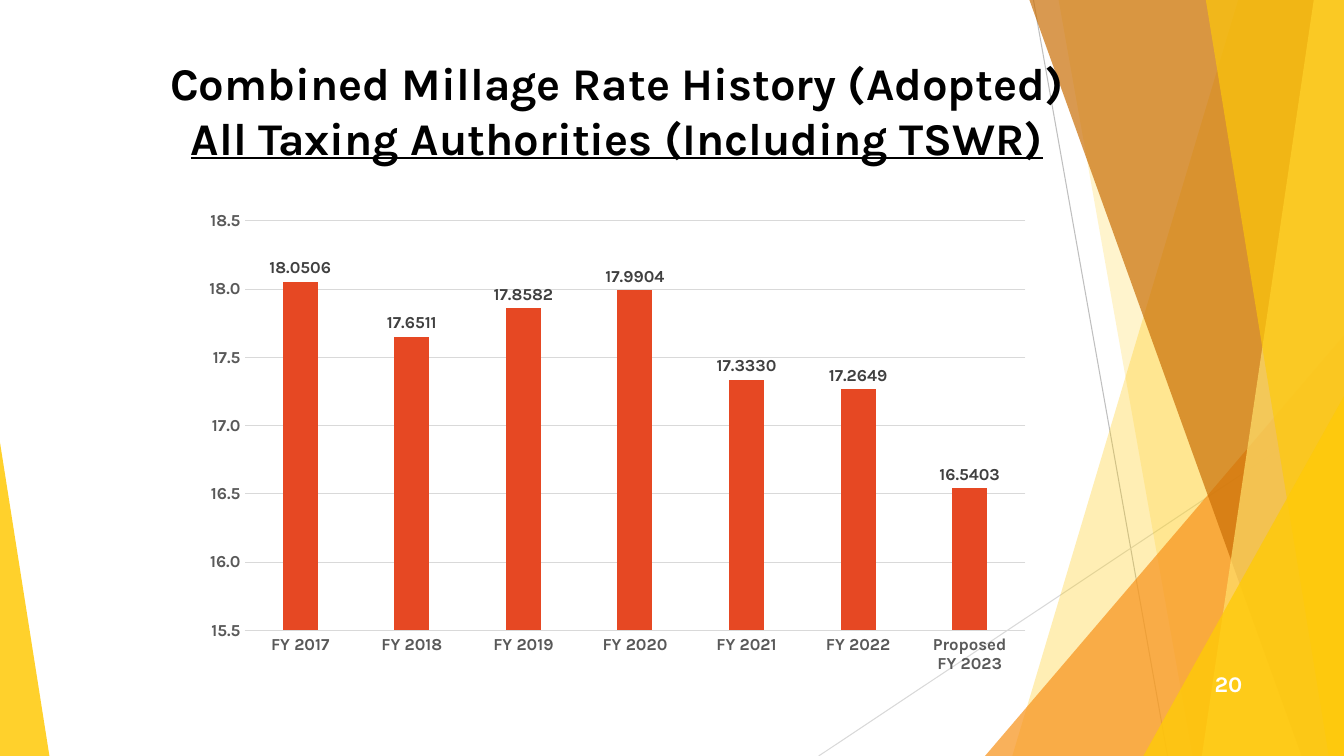
import pptx
import pptx.util
import pptx.dml.color
import pptx.chart.data
import pptx.enum.chart
import pptx.enum.shapes
import pptx.enum.text
import pptx.oxml
import pptx.oxml.ns

Inches = pptx.util.Inches
Pt = pptx.util.Pt
RGBColor = pptx.dml.color.RGBColor
qn = pptx.oxml.ns.qn

GOLD = RGBColor(0xFF, 0xCA, 0x08)
PALE_GOLD = RGBColor(0xFF, 0xDF, 0x6B)
ORANGE = RGBColor(0xF8, 0x93, 0x1D)
BROWN = RGBColor(0xCA, 0x6F, 0x06)
RED = RGBColor(0xE6, 0x48, 0x23)
BLACK = RGBColor(0, 0, 0)
WHITE = RGBColor(0xFF, 0xFF, 0xFF)
LABEL_GRAY = RGBColor(0x40, 0x40, 0x40)
AXIS_GRAY = RGBColor(0x59, 0x59, 0x59)
LINE_GRAY = RGBColor(0xBF, 0xBF, 0xBF)
GRID_GRAY = RGBColor(0xD9, 0xD9, 0xD9)
WIDTH, HEIGHT = 13.33, 7.5


def set_font(font, size, color, **extra):
    font.color.rgb = color
    values = {"name": "Karla", "size": Pt(size), "bold": True, **extra}
    for name, value in values.items():
        setattr(font, name, value)


def paint(shape, color, opacity):
    shape.shadow.inherit = False
    shape.line.fill.background()
    shape.fill.solid()
    shape.fill.fore_color.rgb = color
    color_node = shape.fill._xPr.find(qn("a:solidFill"))[0]
    alpha = color_node.makeelement(qn("a:alpha"), {"val": str(opacity * 1000)})
    color_node.append(alpha)


deck = pptx.Presentation()
deck.slide_width = Inches(WIDTH)
deck.slide_height = Inches(HEIGHT)
page = deck.slides.add_slide(deck.slide_layouts[6])

for start_x, start_y, end_x, end_y, color in [
    (10.25, 0, 11.58, HEIGHT, LINE_GRAY),
    (WIDTH, 4.03, 8.12, HEIGHT, GRID_GRAY),
]:
    line = page.shapes.add_connector(
        pptx.enum.shapes.MSO_CONNECTOR.STRAIGHT,
        Inches(start_x), Inches(start_y), Inches(end_x), Inches(end_y))
    line.line.color.rgb = color
    line.line.width = Pt(0.75)
    properties = line._element.spPr
    properties.append(properties.makeelement(qn("a:effectLst"), {}))

facets = [
    ("band", 12.28, 10.04, GOLD, 30),
    ("band", 10.5, 11.83, GOLD, 20),
    ("triangle", 9.77, 3.33, 3.56, 1, ORANGE, 72),
    ("band", 10.21, 12.91, BROWN, 70),
    ("band", 13.03, 11.92, PALE_GOLD, 70),
    ("band", 11.96, 13.18, GOLD, 65),
    ("triangle", 11.34, 3.93, 1.99, 1, GOLD, 80),
    ("triangle", 0, 4.39, 0.49, 0, GOLD, 85),
]
for kind, *geometry, color, opacity in facets:
    if kind == "band":
        top_x, bottom_x = geometry
        builder = page.shapes.build_freeform(Inches(top_x), 0)
        builder.add_line_segments([
            (Inches(WIDTH), 0),
            (Inches(WIDTH), Inches(HEIGHT)),
            (Inches(bottom_x), Inches(HEIGHT)),
        ])
        facet = builder.convert_to_shape()
    else:
        left, top, width, apex = geometry
        facet = page.shapes.add_shape(
            pptx.enum.shapes.MSO_SHAPE.ISOSCELES_TRIANGLE,
            Inches(left), Inches(top), Inches(width), Inches(HEIGHT - top))
        facet.adjustments[0] = apex
    paint(facet, color, opacity)

title_box = page.shapes.add_textbox(
    Inches(1.58), Inches(0.5), Inches(9.08), Inches(1.08))
title_box.text_frame.word_wrap = True
para = title_box.text_frame.paragraphs[0]
para.alignment = pptx.enum.text.PP_ALIGN.CENTER
span = para.add_run()
span.text = "Combined Millage Rate History (Adopted)"
set_font(span.font, 32.4, BLACK)
para.add_line_break()
span = para.add_run()
span.text = "All Taxing Authorities (Including TSWR)"
set_font(span.font, 32.4, BLACK, underline=True)

number_box = page.shapes.add_textbox(
    Inches(11.67), Inches(6.58), Inches(0.75), Inches(0.4))
number_box.text_frame.word_wrap = True
number_box.text_frame.vertical_anchor = pptx.enum.text.MSO_ANCHOR.MIDDLE
para = number_box.text_frame.paragraphs[0]
para.alignment = pptx.enum.text.PP_ALIGN.RIGHT
span = para.add_run()
span.text = "20"
set_font(span.font, 16, WHITE)

rates = {
    "FY 2017": 18.0506,
    "FY 2018": 17.6511,
    "FY 2019": 17.8582,
    "FY 2020": 17.9904,
    "FY 2021": 17.3330,
    "FY 2022": 17.2649,
    "Proposed\nFY 2023": 16.5403,
}
data = pptx.chart.data.CategoryChartData(number_format="0.0000")
data.categories = list(rates)
data.add_series("Series 1", list(rates.values()))
chart = page.shapes.add_chart(
    pptx.enum.chart.XL_CHART_TYPE.COLUMN_CLUSTERED,
    Inches(1.92), Inches(2), Inches(8.42), Inches(4.78), data).chart
chart.has_title = False
chart.has_legend = False
set_font(chart.font, 10, BLACK, bold=False)

for axis in (chart.category_axis, chart.value_axis):
    axis.major_tick_mark = pptx.enum.chart.XL_TICK_MARK.NONE
    axis.minor_tick_mark = pptx.enum.chart.XL_TICK_MARK.NONE
    set_font(axis.tick_labels.font, 12, AXIS_GRAY)

rate_axis = chart.value_axis
scale = {"minimum_scale": 15.5, "maximum_scale": 18.5, "major_unit": 0.5}
for name, value in scale.items():
    setattr(rate_axis, name, value)
rate_axis.tick_labels.number_format = "0.0"
rate_axis.tick_labels.number_format_is_linked = False
rate_axis.format.line.fill.background()
for rule in (chart.category_axis.format.line, rate_axis.major_gridlines.format.line):
    rule.color.rgb = GRID_GRAY
    rule.width = Pt(0.75)

plot = chart.plots[0]
plot.vary_by_categories = False
plot.gap_width = 219
plot.overlap = -27
bars = plot.series[0]
bars.format.fill.solid()
bars.format.fill.fore_color.rgb = RED
labels = bars.data_labels
label_format = {
    "show_value": True,
    "position": pptx.enum.chart.XL_LABEL_POSITION.OUTSIDE_END,
    "number_format": "0.0000",
    "number_format_is_linked": False,
}
for name, value in label_format.items():
    setattr(labels, name, value)
set_font(labels.font, 12, LABEL_GRAY)

plot_area = chart._chartSpace.chart.plotArea
for old_layout in plot_area.findall(qn("c:layout")):
    plot_area.remove(old_layout)
layout = plot_area.makeelement(qn("c:layout"), {})
plot_area.insert(0, layout)
manual = layout.makeelement(qn("c:manualLayout"), {})
layout.append(manual)
for tag, value in [
    ("layoutTarget", "inner"), ("xMode", "edge"), ("yMode", "edge"),
    ("x", "0.06"), ("y", "0.04"), ("w", "0.92"), ("h", "0.85"),
]:
    manual.append(manual.makeelement(qn("c:" + tag), {"val": value}))

deck.save("out.pptx")
